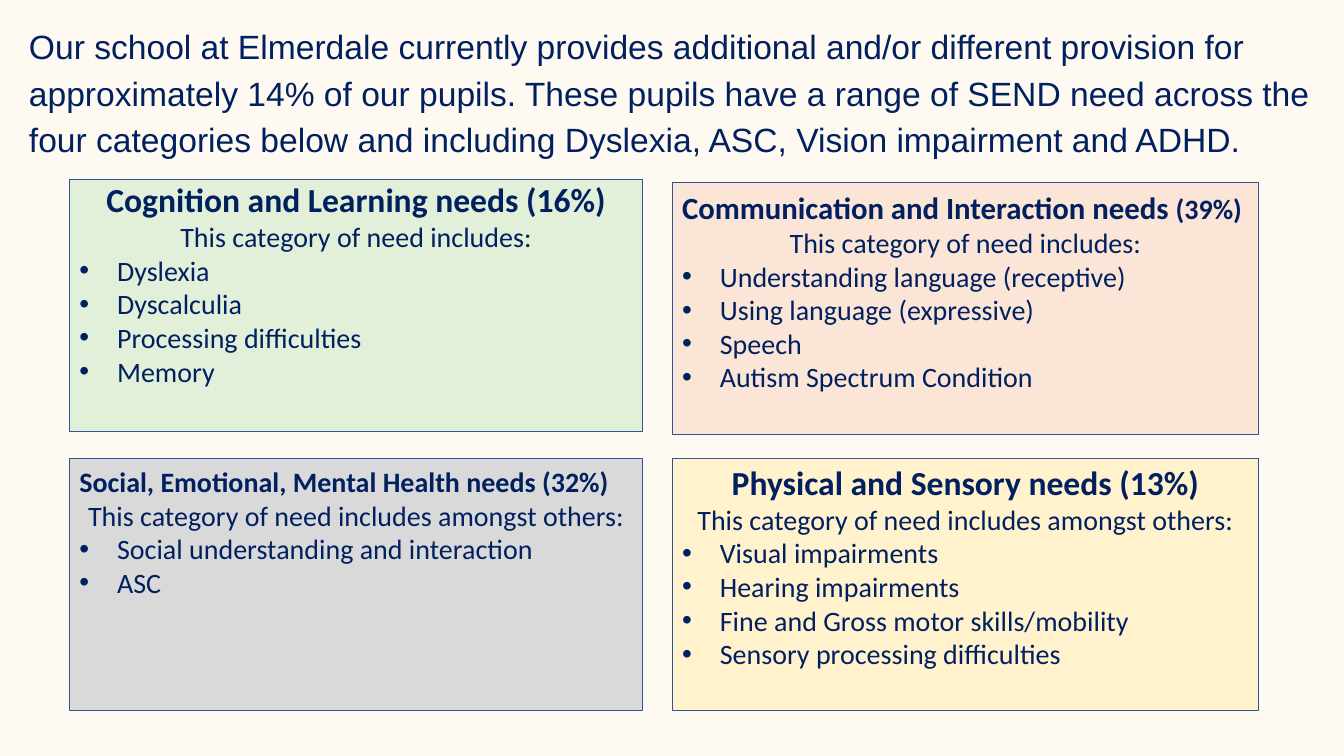
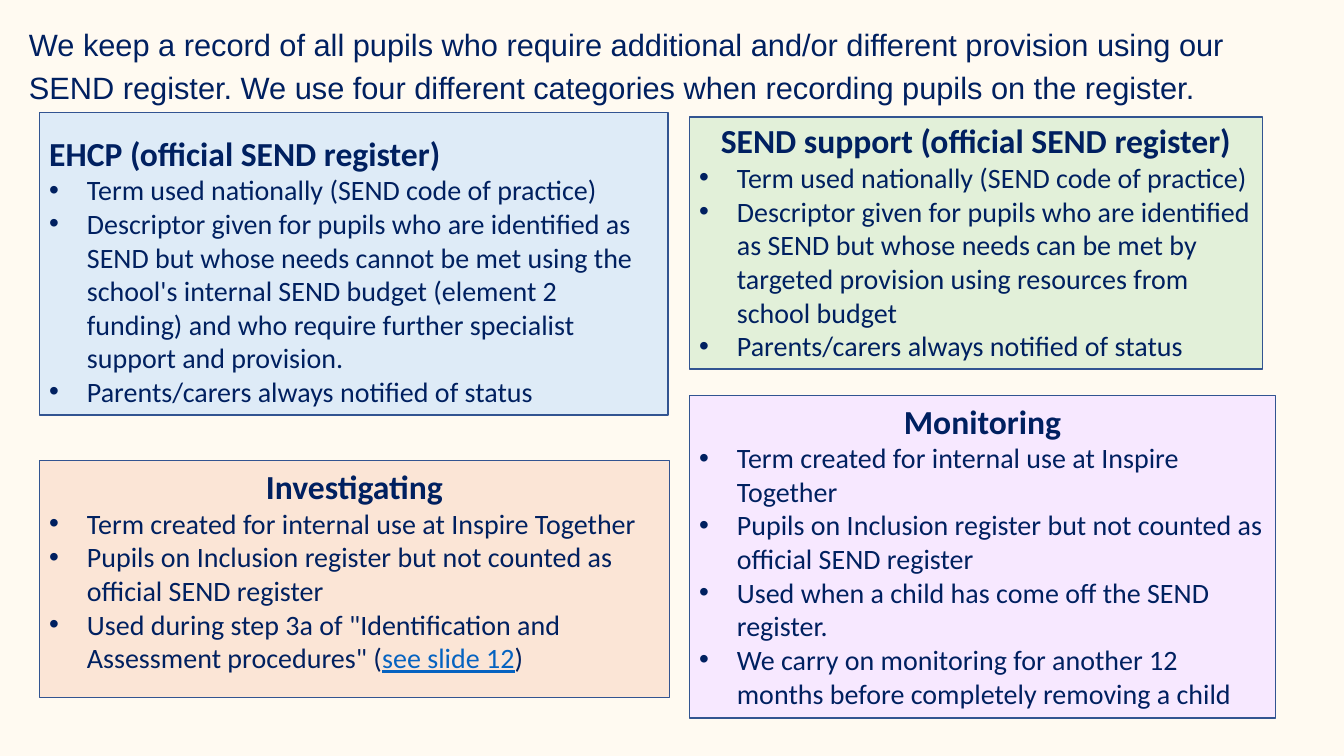
from lxml import etree
from pptx import Presentation
from pptx.dml import color
from pptx.enum import text as t
from pptx.oxml import ns
from pptx.util import Cm, Pt

NAVY, EDGE, LINK, PAPER = "002060", "325491", "0563C1", "FFFAF1"
GREEN, PEACH, GREY, CREAM = "E2F0D9", "FBE5D6", "D9D9D9", "FFF2CC"
SKY, LILAC = "DEEBF7", "F7E8FF"
HANG = 0.95
MID, LEFT = t.PP_ALIGN.CENTER, t.PP_ALIGN.LEFT


def rgb(code):
    """Turn a hex string into a colour."""
    return color.RGBColor.from_string(code)


def say(par, words, size=20, face="Calibri", ink=NAVY, bold=False, under=None):
    """Add one formatted run to a paragraph."""
    run = par.add_run()
    run.text = words
    font = run.font
    font.name, font.size, font.bold, font.underline = face, Pt(size), bold, under
    font.color.rgb = rgb(ink)


def place(item, box, top=0.13):
    """Move a placeholder to a box and set its text frame; return the frame."""
    item.left, item.top, item.width, item.height = map(Cm, box)
    frame = item.text_frame
    frame.word_wrap, frame.auto_size = True, t.MSO_AUTO_SIZE.NONE
    frame.vertical_anchor = t.MSO_ANCHOR.TOP
    frame.margin_left = frame.margin_right = Cm(0.25)
    frame.margin_top, frame.margin_bottom = Cm(top), Cm(0)
    return frame


def style(par, align=LEFT, bullet=False):
    """Set alignment, spacing and bullet of a paragraph."""
    par.alignment = align
    par.space_before = par.space_after = Pt(0)
    props = par._p.get_or_add_pPr()
    hang = Cm(HANG) if bullet else 0
    props.set("marL", str(hang))
    props.set("indent", str(-hang))
    mark = etree.SubElement(props, ns.qn("a:buChar" if bullet else "a:buNone"))
    if bullet:
        mark.set("char", "•")


def intro(item, words, size, high):
    """Write the opening statement in the title placeholder."""
    par = place(item, (0.48, 0.38, 32.9, high)).paragraphs[0]
    style(par)
    par.line_spacing, par.space_after = 1.15, Pt(6)
    say(par, words, size=size, face="Arial")


def panel(item, box, fill, top, head, items, lead=None, align=MID):
    """Fill a body placeholder with a heading, a lead line and bullets."""
    frame = place(item, box, top)
    item.fill.solid()
    item.fill.fore_color.rgb = rgb(fill)
    item.line.color.rgb, item.line.width = rgb(EDGE), Pt(1)
    par = frame.paragraphs[0]
    style(par, align)
    for words, size in head:
        say(par, words, size=size, bold=True)
    if lead:
        par = frame.add_paragraph()
        style(par, MID)
        say(par, lead)
    for runs in items:
        par = frame.add_paragraph()
        style(par, bullet=True)
        for words, form in [(runs, {})] if isinstance(runs, str) else runs:
            say(par, words, **form)


def build(deck, words, size, high, panels):
    """Add one slide with an opening statement and four panels."""
    slide = deck.slides.add_slide(deck.slide_layouts.get_by_name("Comparison"))
    intro(slide.shapes.title, words, size, high)
    for spot, parts in enumerate(panels, 1):
        panel(slide.placeholders[spot], **parts)


def needs(deck):
    """Build the slide on the four categories of need."""
    lead = "This category of need includes:"
    more = "This category of need includes amongst others:"
    west, east, wide, broad, tall, low = 1.75, 16.94, 14.45, 14.78, 6.35, 11.56
    build(
        deck,
        "Our school at Elmerdale currently provides additional and/or different "
        "provision for approximately 14% of our pupils. These pupils have a range "
        "of SEND need across the four categories below and including Dyslexia, "
        "ASC, Vision impairment and ADHD.", 24, 3.68,
        [
            dict(box=(west, 4.52, wide, tall), fill=GREEN, top=0, lead=lead,
                 head=[("Cognition and Learning needs (16%)", 24)],
                 items=["Dyslexia", "Dyscalculia", "Processing difficulties",
                        "Memory"]),
            dict(box=(east, 4.6, broad, tall), fill=PEACH, top=0.15, lead=lead,
                 head=[("Communication and Interaction needs ", 22),
                       ("(39%)", 20)], align=LEFT,
                 items=["Understanding language (receptive)",
                        "Using language (expressive)", "Speech",
                        "Autism Spectrum Condition"]),
            dict(box=(west, low, wide, tall), fill=GREY, top=0.15, lead=more,
                 head=[("Social, Emotional, Mental Health needs (32%)", 20)],
                 align=LEFT,
                 items=["Social understanding and interaction", "ASC"]),
            dict(box=(east, low, broad, tall), fill=CREAM, top=0.08, lead=more,
                 head=[("Physical and Sensory needs (13%)", 24)],
                 items=["Visual impairments", "Hearing impairments",
                        "Fine and Gross motor skills/mobility",
                        "Sensory processing difficulties"]),
        ])


def register(deck):
    """Build the slide on the four parts of the register."""
    term = "Term used nationally (SEND code of practice)"
    told = "Parents/carers always notified of status"
    count = ("Pupils on Inclusion register but not counted as "
             "official SEND register")
    west, east = 0.99, 17.37
    build(
        deck,
        "We keep a record of all pupils who require additional and/or different "
        "provision using our SEND register. We use four different categories when "
        "recording pupils on the register.", 22, 2.34,
        [
            dict(box=(west, 2.84, 15.85, 7.62), fill=SKY, top=0.5, align=LEFT,
                 head=[("EHCP (official SEND register)", 24)],
                 items=[term,
                        "Descriptor given for pupils who are identified as SEND "
                        "but whose needs cannot be met using the school's internal "
                        "SEND budget (element 2 funding) and who require further "
                        "specialist support and provision.", told]),
            dict(box=(east, 2.95, 14.45, 6.35), fill=GREEN, top=0.08,
                 head=[("SEND support (official SEND register)", 24)],
                 items=[term,
                        "Descriptor given for pupils who are identified as SEND "
                        "but whose needs can be met by targeted provision using "
                        "resources from school budget", told]),
            dict(box=(west, 11.61, 15.88, 5.97), fill=PEACH, top=0.13,
                 head=[("Investigating", 24)],
                 items=["Term created for internal use at Inspire Together", count,
                        [('Used during step 3a of "Identification and Assessment '
                          'procedures" (', {}),
                         ("see slide 12", dict(ink=LINK, under=True)),
                         (")", {})]]),
            dict(box=(east, 9.96, 14.78, 8.13), fill=LILAC, top=0.13,
                 head=[("Monitoring", 24)],
                 items=["Term created for internal use at Inspire Together", count,
                        "Used when a child has come off the SEND register.",
                        "We carry on monitoring for another 12 months before "
                        "completely removing a child"]),
        ])


def main():
    """Make the deck and save it."""
    deck = Presentation()
    deck.slide_width, deck.slide_height = Cm(33.87), Cm(19.05)
    back = deck.slide_master.background.fill
    back.solid()
    back.fore_color.rgb = rgb(PAPER)
    needs(deck)
    register(deck)
    deck.save("out.pptx")


if __name__ == "__main__":
    main()
